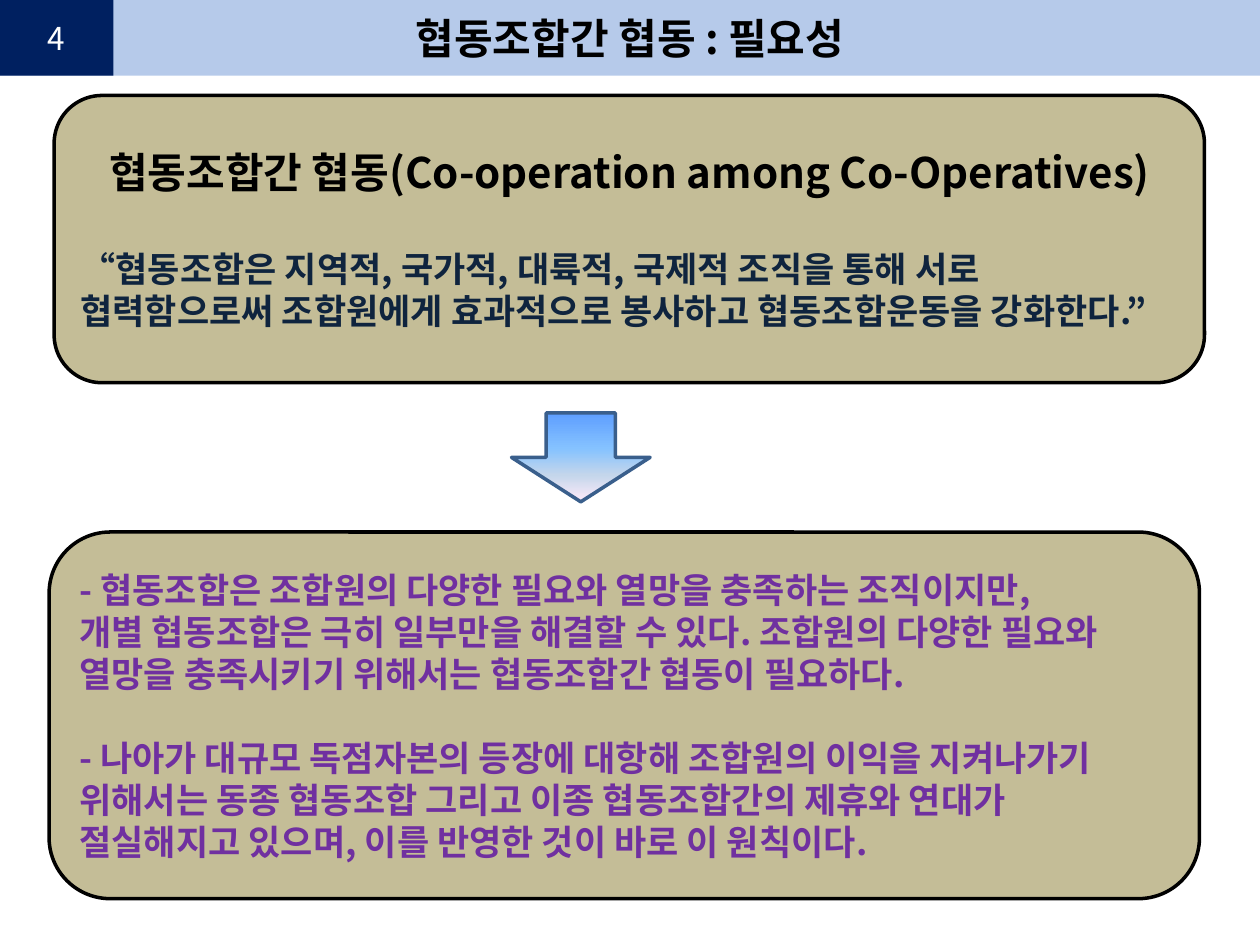
from lxml import etree
from pptx import Presentation
from pptx import util as u
from pptx.dml.color import RGBColor
from pptx.enum import shapes, text
from pptx.oxml import ns

FONT = "Noto Sans CJK KR"
W, H = u.Inches(10), u.Inches(7.5)
SHAPE = shapes.MSO_SHAPE
LEFT, CENTER = text.PP_ALIGN.LEFT, text.PP_ALIGN.CENTER


def color(value):
    return RGBColor.from_string(value)


def place(sp, box):
    x, y, w, h = box
    sp.left, sp.top = int(x * W), int(y * H)
    sp.width, sp.height = int(w * W), int(h * H)


def paint(sp, fill, line=None):
    sp.fill.solid()
    sp.fill.fore_color.rgb = color(fill)
    outline(sp, line)


def outline(sp, line):
    if line:
        sp.line.color.rgb = color(line)
        sp.line.width = u.Pt(2)
    else:
        sp.line.fill.background()


def add_shape(s, kind, box):
    sp = s.shapes.add_shape(kind, 0, 0, 0, 0)
    sp.shadow.inherit = False
    place(sp, box)
    return sp


def write(tf, lines):
    tf.word_wrap = True
    tf.auto_size = text.MSO_AUTO_SIZE.NONE
    tf.vertical_anchor = text.MSO_ANCHOR.MIDDLE
    for i, (words, size, rgb, bold, align, gap) in enumerate(lines):
        p = tf.add_paragraph() if i else tf.paragraphs[0]
        p.text = words
        p.alignment = align
        p.line_spacing = u.Pt(size * 1.2)
        p.space_after = u.Pt(gap)
        for r in p.runs:
            r.font.name = FONT
            r.font.size = u.Pt(size)
            r.font.bold = bold
            r.font.color.rgb = color(rgb)
            ea = etree.SubElement(r.font._element, ns.qn("a:ea"))
            ea.set("typeface", FONT)


def add_header(s, box, title, number):
    x, y, w, h = box
    band = s.shapes.title
    place(band, box)
    paint(band, "B6CAEA")
    write(band.text_frame, [(title, 24, "000000", True, CENTER, 0)])
    tab = add_shape(s, SHAPE.RECTANGLE, (x, y, w * 0.09, h))
    paint(tab, "002060")
    write(tab.text_frame, [(number, 18, "FFFFFF", False, CENTER, 0)])


def add_panel(s, box, lines):
    panel = add_shape(s, SHAPE.ROUNDED_RECTANGLE, box)
    paint(panel, "C4BD97", "000000")
    write(panel.text_frame, lines)


def add_arrow(s, box, stops):
    arrow = add_shape(s, SHAPE.DOWN_ARROW, box)
    arrow.fill.gradient()
    arrow.fill.gradient_angle = 270
    gs_lst = arrow._element.spPr.find(".//" + ns.qn("a:gsLst"))
    for gs in list(gs_lst):
        gs_lst.remove(gs)
    for pos, rgb in stops:
        gs = etree.SubElement(gs_lst, ns.qn("a:gs"), pos=str(pos * 1000))
        etree.SubElement(gs, ns.qn("a:srgbClr"), val=rgb)
    outline(arrow, "3A5F8C")


def main():
    prs = Presentation()
    prs.slide_width, prs.slide_height = W, H
    s = prs.slides.add_slide(prs.slide_layouts[5])
    add_header(s, (0, 0, 1, 0.08), "협동조합간 협동 : 필요성", "4")
    add_panel(s, (0.043, 0.101, 0.913, 0.304), [
        ("협동조합간 협동(Co-operation among Co-Operatives)",
         24, "000000", True, CENTER, 28.8),
        ("“협동조합은 지역적, 국가적, 대륙적, 국제적 조직을 통해 서로 "
         "협력함으로써 조합원에게 효과적으로 봉사하고 협동조합운동을 강화한다.”",
         20, "0F243E", True, LEFT, 0),
    ])
    reasons = [
        ("- 협동조합은 조합원의 다양한 필요와 열망을 충족하는 조직이지만,", 0),
        ("개별 협동조합은 극히 일부만을 해결할 수 있다. 조합원의 다양한 필요와 "
         "열망을 충족시키기 위해서는 협동조합간 협동이 필요하다.", 24),
        ("- 나아가 대규모 독점자본의 등장에 대항해 조합원의 이익을 지켜나가기 "
         "위해서는 동종 협동조합 그리고 이종 협동조합간의 제휴와 연대가 "
         "절실해지고 있으며, 이를 반영한 것이 바로 이 원칙이다.", 0),
    ]
    add_panel(s, (0.039, 0.563, 0.913, 0.388),
              [(words, 20, "7030A0", True, LEFT, gap) for words, gap in reasons])
    add_arrow(s, (0.406, 0.437, 0.11, 0.094),
              [(0, "5E9EFF"), (40, "85C2FF"), (70, "C4D6EB"), (100, "FFEBFA")])
    prs.save("out.pptx")


if __name__ == "__main__":
    main()
